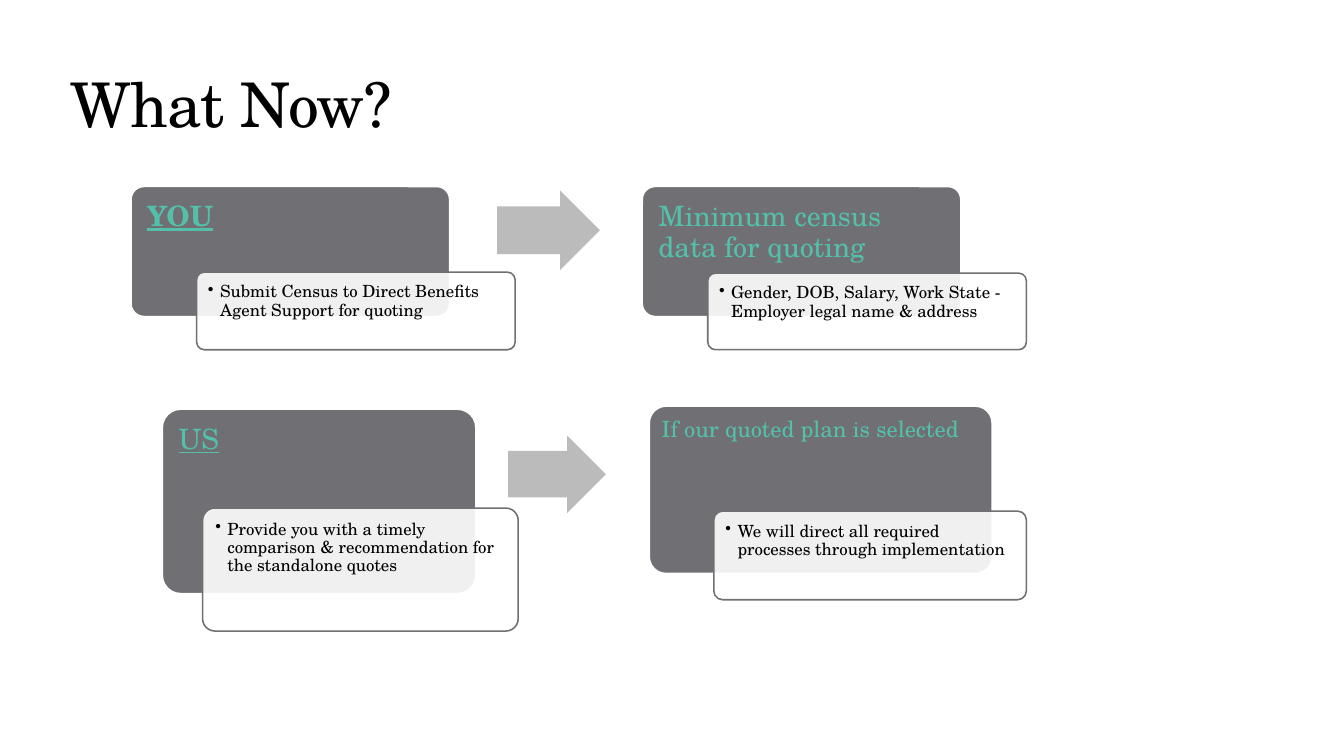
from lxml.etree import SubElement
from pptx import Presentation
from pptx.dml.color import RGBColor
from pptx.enum.shapes import MSO_SHAPE as Preset
from pptx.enum.text import MSO_ANCHOR as Anchor, MSO_AUTO_SIZE as AutoSize, PP_ALIGN as Align
from pptx.oxml.ns import qn
from pptx.util import Inches, Pt

GRAY, LIGHT_GRAY, TEAL, BLACK, WHITE = "6F6F74", "BBBBBC", "54C0AA", "000000", "FFFFFF"
CORNER = 0.1


def add_block(group, preset, place, fill, line=None):
    block = group.shapes.add_shape(preset, *[Inches(length) for length in place])
    block.shadow.inherit = False
    block.fill.solid()
    block.fill.fore_color.rgb = RGBColor.from_string(fill)
    if line:
        block.line.color.rgb = RGBColor.from_string(line)
        block.line.width = Pt(1.1)
    else:
        block.line.fill.background()
    return block


def write(box, text, color, anchor, margins, formats):
    frame = box.text_frame
    frame.auto_size = AutoSize.NONE
    frame.word_wrap = True
    frame.vertical_anchor = anchor
    for side, margin in zip(("left", "top", "right", "bottom"), margins):
        setattr(frame, f"margin_{side}", Inches(margin))
    para = frame.paragraphs[0]
    para.alignment = Align.LEFT
    para.line_spacing = 0.9
    span = para.add_run()
    span.text = text
    span.font.color.rgb = RGBColor.from_string(color)
    for name, value in {"name": "TeX Gyre Schola", **formats}.items():
        setattr(span.font, name, value)
    return para


deck = Presentation()
deck.slide_width, deck.slide_height = Inches(13.33), Inches(7.5)
page = deck.slides.add_slide(deck.slide_layouts[5])

title = page.shapes.title
for name, length in {"left": 0.6, "top": 0.25, "width": 12, "height": 1.2}.items():
    setattr(title, name, Inches(length))
heading = write(title, "What Now?", BLACK, Anchor.BOTTOM, (0.1, 0.05, 0.1, 0.05), {"size": Pt(44)})
heading.runs[0].font._element.set("spc", "-50")

rows = [
    {
        "arrow": (4.93, 1.89, 1.02, 0.79),
        "steps": [
            ("YOU", {"size": Pt(20), "bold": True, "underline": True}, 0.16, (1.3, 1.85, 3.16, 1.29),
             "Submit Census to Direct Benefits Agent Support for quoting", (1.95, 2.7, 3.16, 0.77)),
            ("Minimum census data for quoting", {"size": Pt(20)}, 0.16, (6.37, 1.85, 3.16, 1.29),
             "Gender, DOB, Salary, Work State - Employer legal name & address", (7.02, 2.71, 3.16, 0.76)),
        ],
    },
    {
        "arrow": (5.04, 4.32, 0.97, 0.77),
        "steps": [
            ("US", {"size": Pt(20), "underline": True}, 0.16, (1.61, 4.06, 3.11, 1.83),
             "Provide you with a timely comparison & recommendation for the standalone quotes",
             (2.01, 5.04, 3.13, 1.22)),
            ("If our quoted plan is selected", {"size": Pt(16)}, 0.12, (6.44, 4.03, 3.4, 1.66),
             "We will direct all required processes through implementation", (7.08, 5.07, 3.1, 0.88)),
        ],
    },
]

for row in rows:
    group = page.shapes.add_group_shape()
    for label, formats, inset, panel_place, detail, card_place in row["steps"]:
        panel = add_block(group, Preset.ROUNDED_RECTANGLE, panel_place, GRAY, WHITE)
        panel.adjustments[0] = CORNER
        margin = inset - 0.29 * CORNER * panel_place[3]
        write(panel, label, TEAL, Anchor.TOP, [margin] * 4, formats)

        card = add_block(group, Preset.ROUNDED_RECTANGLE, card_place, WHITE, GRAY)
        card.adjustments[0] = CORNER
        tint = card.fill._xPr.find(qn("a:solidFill"))[0]
        SubElement(tint, qn("a:alpha"), val="90000")
        para = write(card, detail, BLACK, Anchor.TOP, [0.09] * 4, {"size": Pt(12)})
        para.level = 1
        layout = para._p.get_or_add_pPr()
        layout.set("marL", str(Inches(0.12)))
        layout.set("indent", str(Inches(-0.12)))
        SubElement(layout, qn("a:buChar"), char="•")
    arrow = add_block(group, Preset.RIGHT_ARROW, row["arrow"], LIGHT_GRAY)
    arrow.adjustments[0], arrow.adjustments[1] = 0.6, 0.5

deck.save("out.pptx")
